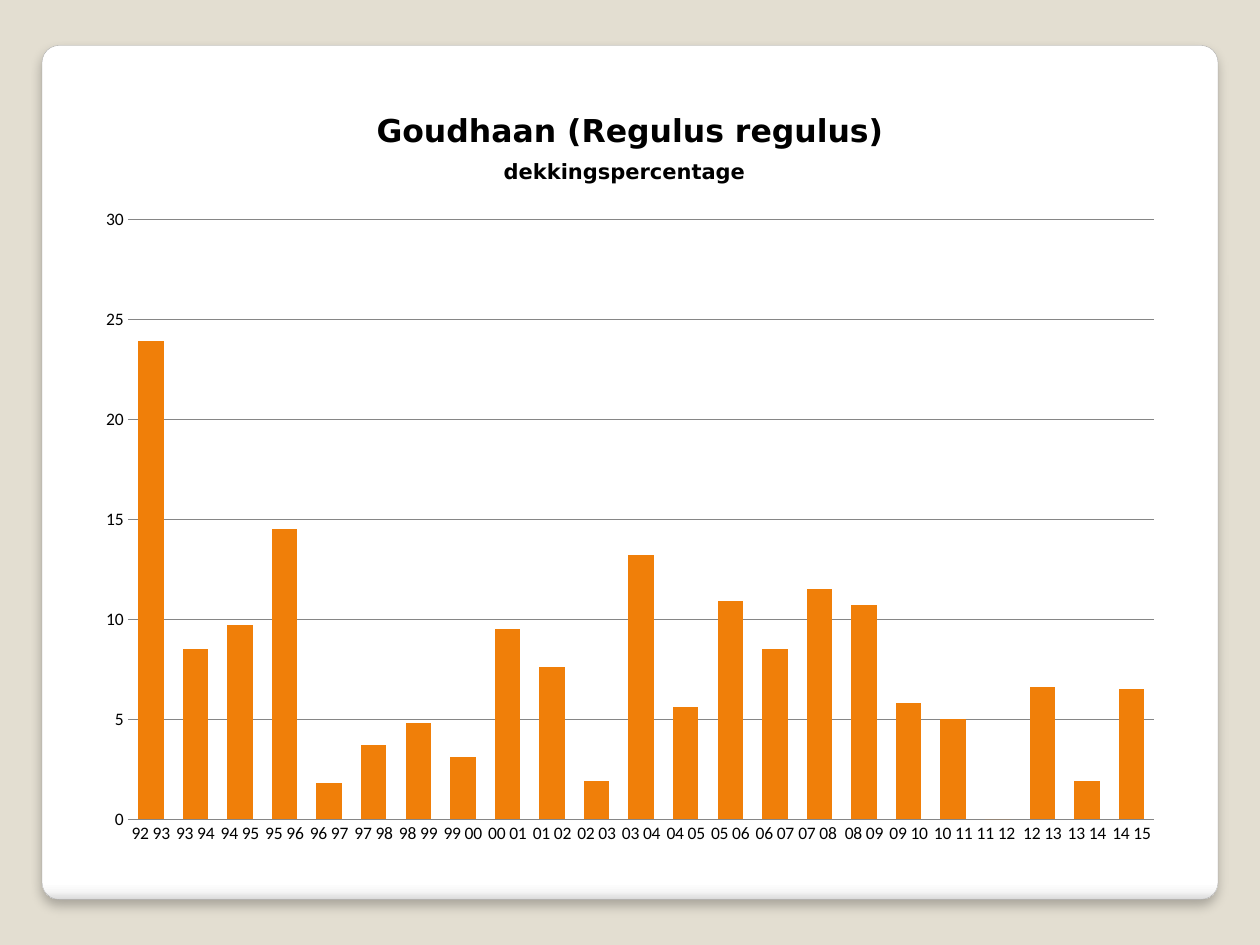
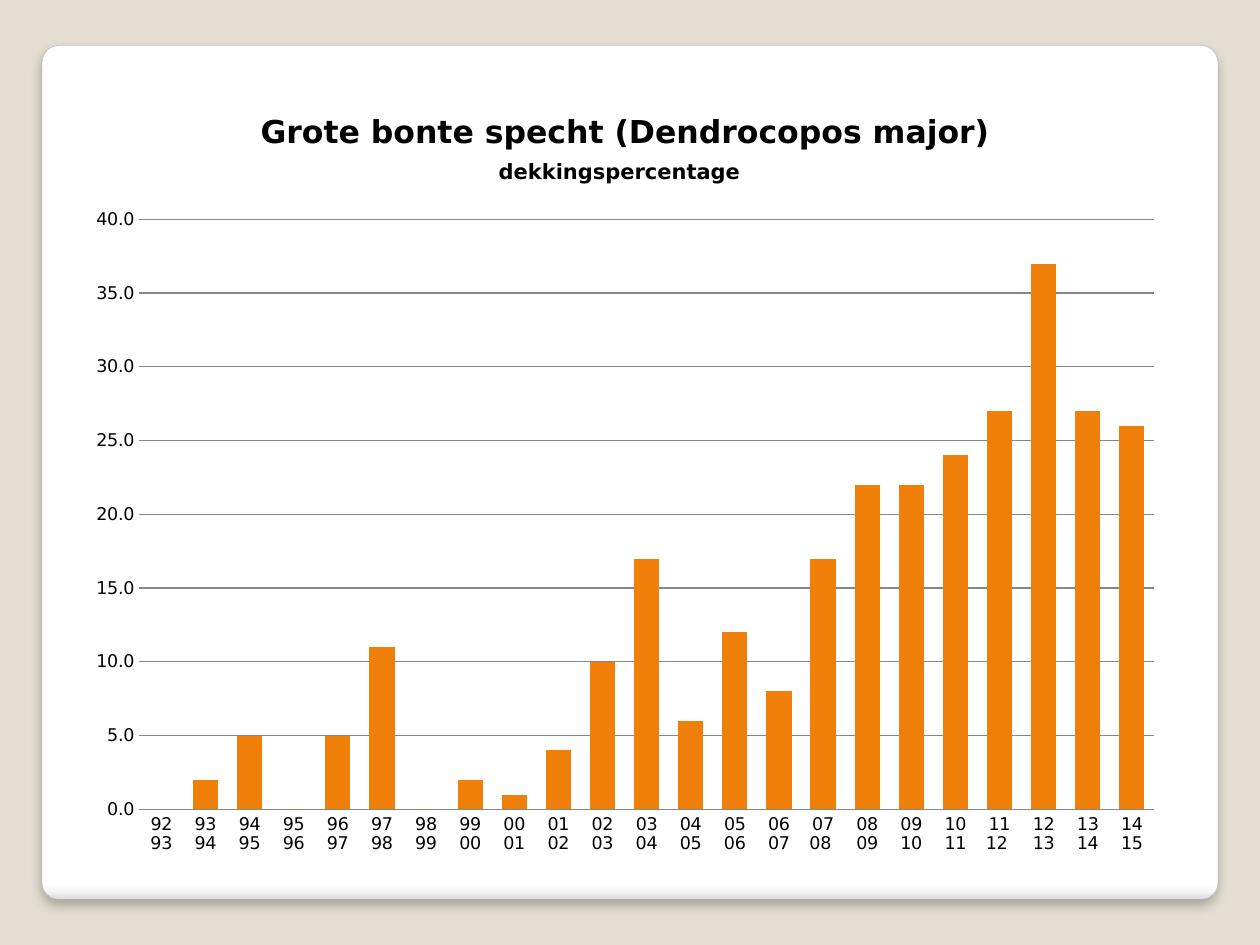
import dataclasses
import lxml.etree
import pptx
import pptx.chart.data
import pptx.dml.color
import pptx.enum.chart
import pptx.enum.shapes
import pptx.oxml
import pptx.oxml.ns
import pptx.util

Pt = pptx.util.Pt
Color = pptx.dml.color.RGBColor.from_string
qn = pptx.oxml.ns.qn


@dataclasses.dataclass(frozen=True)
class Theme:
    back: str = "E3DED1"
    edge: str = "A4A4A4"
    bar: str = "F07F09"
    grid: str = "868686"
    text: str = "000000"
    head: str = "DejaVu Sans"
    stops: tuple = ((0, "FFFFFF"), (98, "FFFFFF"), (99, "F7F7F7"), (100, "DADADA"))
    title: int = 18
    sub: int = 12
    label: int = 10


theme = Theme()

seasons = ["92 93", "93 94", "94 95", "95 96", "96 97", "97 98", "98 99", "99 00",
           "00 01", "01 02", "02 03", "03 04", "04 05", "05 06", "06 07", "07 08 ",
           "08 09", "09 10", "10 11", "11 12 ", "12 13", "13 14", "14 15"]

# frame and plot are left, top, width, height on the slide, in points
birds = [
    dict(name="Goudhaan (Regulus regulus)", font="Calibri", form="General", top=30,
         frame=(48.24, 48.96, 623.52, 442.08), plot=(73.4, 125.4, 586, 342.8),
         vals=[23.9, 8.5, 9.7, 14.5, 1.8, 3.7, 4.8, 3.1, 9.5, 7.6, 1.9, 13.2,
               5.6, 10.9, 8.5, 11.5, 10.7, 5.8, 5, 0, 6.6, 1.9, 6.5]),
    dict(name="Grote bonte specht (Dendrocopos major)", font="DejaVu Sans", form="0.0", top=40,
         frame=(42.48, 48.96, 629.28, 447.84), plot=(79.6, 125.4, 579.8, 337.2),
         vals=[0, 2, 5, 0, 5, 11, 0, 2, 1, 4, 10, 17,
               6, 12, 8, 17, 22, 22, 24, 27, 37, 27, 26]),
]


def add_card(slide):
    """Draw the white rounded panel that lies behind the chart."""
    card = slide.shapes.add_shape(pptx.enum.shapes.MSO_SHAPE.ROUNDED_RECTANGLE,
                                  Pt(24), Pt(26), Pt(672), Pt(488))
    card.adjustments[0] = 0.02
    card.line.color.rgb = Color(theme.edge)
    card.line.width = Pt(0.16)
    card.fill.gradient()
    card.fill.gradient_angle = 270
    stops = card.fill._fill._gradFill.find(qn("a:gsLst"))
    for old in list(stops):
        stops.remove(old)
    for pos, tint in theme.stops:
        stop = lxml.etree.SubElement(stops, qn("a:gs"), pos=str(pos * 1000))
        lxml.etree.SubElement(stop, qn("a:srgbClr"), val=tint)
    card.shadow.inherit = False
    glow = lxml.etree.SubElement(card._element.spPr.find(qn("a:effectLst")), qn("a:outerShdw"),
                                 blurRad=str(Pt(6)), dist=str(Pt(4)), dir="5400000",
                                 algn="t", rotWithShape="0")
    tint = lxml.etree.SubElement(glow, qn("a:srgbClr"), val="000000")
    lxml.etree.SubElement(tint, qn("a:alpha"), val="25000")


def place_plot(chart, frame, plot):
    """Fix the inner plot area, turning points into shares of the chart frame."""
    left, top, width, height = frame
    shares = ((plot[0] - left) / width, (plot[1] - top) / height,
              plot[2] / width, plot[3] / height)
    area = chart._chartSpace.chart.plotArea
    for old in area.findall(qn("c:layout")):
        area.remove(old)
    layout = lxml.etree.Element(qn("c:layout"))
    area.insert(0, layout)
    manual = lxml.etree.SubElement(layout, qn("c:manualLayout"))
    rules = [("layoutTarget", "inner"), ("xMode", "edge"), ("yMode", "edge")]
    for key, val in rules + list(zip("xywh", shares)):
        lxml.etree.SubElement(manual, qn("c:" + key), val=str(val))


deck = pptx.Presentation()
deck.slide_width, deck.slide_height = Pt(720), Pt(540)
ground = deck.slide_master.background.fill
ground.solid()
ground.fore_color.rgb = Color(theme.back)

for bird in birds:
    slide = deck.slides.add_slide(deck.slide_layouts[6])
    add_card(slide)

    data = pptx.chart.data.CategoryChartData(number_format=bird["form"])
    data.categories = seasons
    data.add_series("Series 1", bird["vals"])
    chart = slide.shapes.add_chart(pptx.enum.chart.XL_CHART_TYPE.COLUMN_CLUSTERED,
                                   *map(Pt, bird["frame"]), data).chart
    chart.has_legend = False
    chart.font.name = bird["font"]
    chart.font.size = Pt(theme.label)
    chart.font.color.rgb = Color(theme.text)
    place_plot(chart, bird["frame"], bird["plot"])

    chart.has_title = True
    frame = chart.chart_title.text_frame
    # The closing space keeps the title size, which sets the height of its line
    lines = [[(bird["name"], theme.title)],
             [("dekkingspercentage", theme.sub), (" ", theme.title)]]
    for num, runs in enumerate(lines):
        para = frame.add_paragraph() if num else frame.paragraphs[0]
        for words, size in runs:
            run = para.add_run()
            run.text = words
            run.font.name = theme.head
            run.font.size = Pt(size)
            run.font.bold = True
            run.font.color.rgb = Color(theme.text)

    plot = chart.plots[0]
    plot.gap_width = 75
    plot.overlap = -25
    plot.vary_by_categories = False
    bars = plot.series[0].format.fill
    bars.solid()
    bars.fore_color.rgb = Color(theme.bar)

    scale = chart.value_axis
    scale.minimum_scale, scale.maximum_scale, scale.major_unit = 0, bird["top"], 5
    scale.tick_labels.number_format = bird["form"]
    scale.tick_labels.number_format_is_linked = False
    scale.format.line.fill.background()
    for axis in (scale, chart.category_axis):
        axis.major_tick_mark = pptx.enum.chart.XL_TICK_MARK.NONE
        axis.minor_tick_mark = pptx.enum.chart.XL_TICK_MARK.NONE
    for line in (scale.major_gridlines.format.line, chart.category_axis.format.line):
        line.color.rgb = Color(theme.grid)
        line.width = Pt(0.75)

deck.save("out.pptx")
